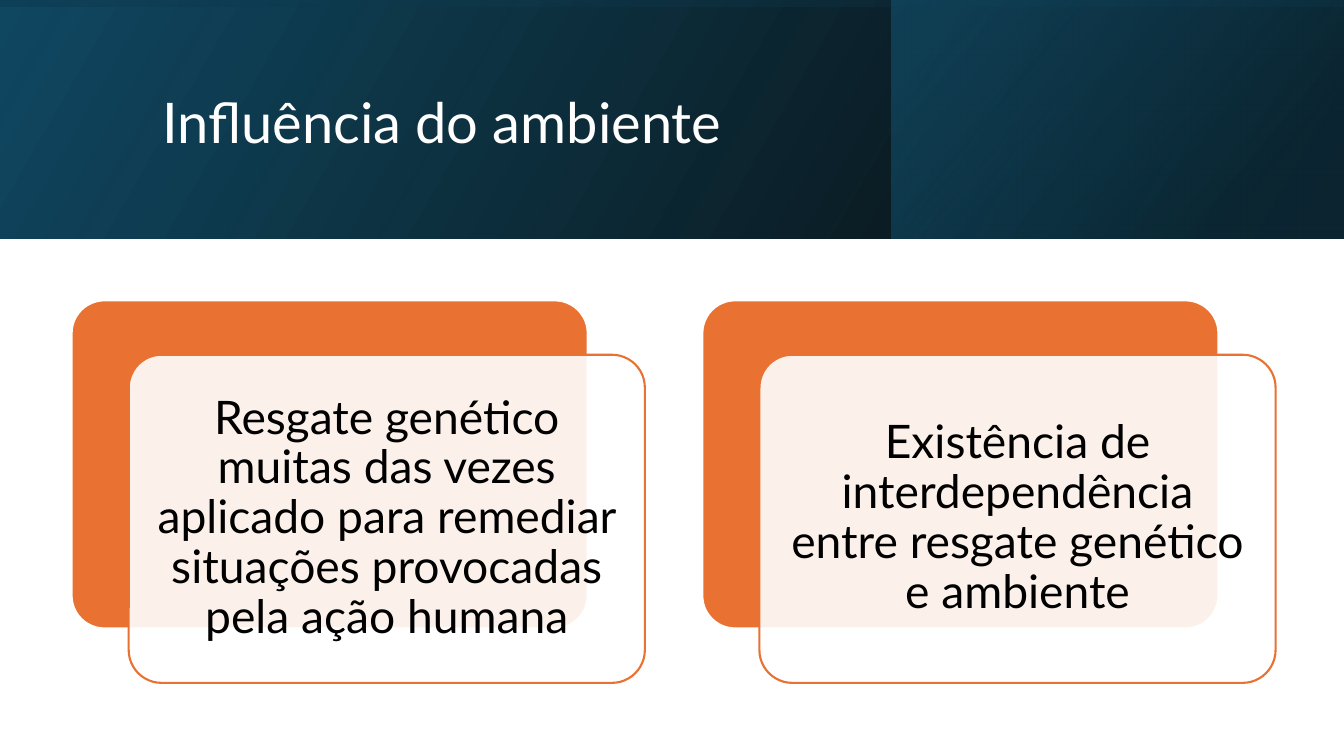
from dataclasses import dataclass

from lxml import etree
from pptx import Presentation, util as u
from pptx.dml.color import RGBColor
from pptx.enum import shapes, text
from pptx.oxml.ns import qn

WIDE, HIGH = 13.33, 7.5
COL, ROW = WIDE / 100, HIGH / 100
BAND = 31.6


@dataclass(frozen=True)
class Theme:
    font: str = "Lato"
    white: str = "FFFFFF"
    black: str = "000000"
    accent: str = "E97132"
    deep: str = "104862"
    night: str = "0B3041"
    sea: str = "156082"
    head: float = 40
    body: float = 33
    edge: float = 1.5


T = Theme()


def grid(left, top, wide, high):
    return [u.Inches(n) for n in (left * COL, top * ROW, wide * COL, high * ROW)]


def tint(color, alpha):
    node = etree.Element(qn("a:srgbClr"), val=color)
    etree.SubElement(node, qn("a:alpha"), val=str(alpha * 1000))
    return node


def fade(shape, stops, angle):
    shape.fill.gradient()
    grad = shape._element.spPr.find(qn("a:gradFill"))
    for child in list(grad):
        grad.remove(child)
    items = etree.SubElement(grad, qn("a:gsLst"))
    for pos, color, alpha in stops:
        stop = etree.SubElement(items, qn("a:gs"), pos=str(pos * 1000))
        stop.append(tint(color, alpha))
    etree.SubElement(grad, qn("a:lin"), ang=str(angle * 60000), scaled="0")


def band(slide, box, stops, angle, turn=0):
    left, top, wide, high = grid(*box)
    if turn:
        left, top = left + (wide - high) // 2, top + (high - wide) // 2
        wide, high = high, wide
    shape = slide.shapes.add_shape(shapes.MSO_SHAPE.RECTANGLE, left, top, wide, high)
    shape.shadow.inherit = False
    shape.line.fill.background()
    shape.rotation = turn
    shape._element.spPr.find(qn("a:xfrm")).set("flipH", "1")
    fade(shape, stops, angle)


def write(frame, words, size, color, align):
    frame.word_wrap = True
    frame.auto_size = text.MSO_AUTO_SIZE.NONE
    frame.vertical_anchor = text.MSO_ANCHOR.MIDDLE
    para = frame.paragraphs[0]
    para.alignment = align
    para.line_spacing = 0.9
    run = para.add_run()
    run.text = words
    run.font.name = T.font
    run.font.size = u.Pt(size)
    run.font.color.rgb = RGBColor.from_string(color)


def title(slide, words):
    head = slide.shapes.title
    head.left, head.top, head.width, head.height = grid(11.33, 5.07, 79.74, 22.93)
    write(head.text_frame, words, T.head, T.white, text.PP_ALIGN.LEFT)
    tree = slide.shapes._spTree
    tree.remove(head._element)
    tree.append(head._element)


def panel(group, box, fill, line, alpha=100):
    shape = group.shapes.add_shape(shapes.MSO_SHAPE.ROUNDED_RECTANGLE, *grid(*box))
    shape.adjustments[0] = 0.1
    shape.shadow.inherit = False
    shape.fill.solid()
    shape.fill.fore_color.rgb = RGBColor.from_string(fill)
    if alpha < 100:
        solid = shape._element.spPr.find(qn("a:solidFill"))
        solid.replace(solid[0], tint(fill, alpha))
    shape.line.color.rgb = RGBColor.from_string(line)
    shape.line.width = u.Pt(T.edge)


def card(group, left, words):
    top, wide, high = 39.73, 38.4, 43.4
    over, down = left + 4.25, top + 7.2
    panel(group, (left, top, wide, high), T.accent, T.white)
    panel(group, (over, down, wide, high), T.white, T.accent, 90)
    note = group.shapes.add_textbox(
        *grid(over + 0.71, down + 1.27, wide - 1.42, high - 2.54))
    frame = note.text_frame
    frame.margin_left = frame.margin_right = u.Inches(0.14)
    frame.margin_top = frame.margin_bottom = u.Inches(0.14)
    write(frame, words, T.body, T.black, text.PP_ALIGN.CENTER)


def main():
    deck = Presentation()
    deck.slide_width, deck.slide_height = u.Inches(WIDE), u.Inches(HIGH)
    slide = deck.slides.add_slide(deck.slide_layouts[5])
    full = (0, 0, 100, BAND)
    band(slide, full, [(0, T.black, 96), (100, T.deep, 100)], 330)
    band(slide, (66.35, 0, 33.65, BAND), [(19, T.night, 68), (100, T.sea, 48)], 320)
    band(slide, full, [(23, T.deep, 16), (99, T.black, 45)], 350, 270)
    title(slide, "Influência do ambiente")
    group = slide.shapes.add_group_shape()
    notes = (
        "Resgate genético muitas das vezes aplicado para remediar "
        "situações provocadas pela ação humana",
        "Existência de interdependência entre resgate genético e ambiente",
    )
    for spot, words in enumerate(notes):
        card(group, 5.33 + spot * 46.93, words)
    deck.save("out.pptx")


if __name__ == "__main__":
    main()
